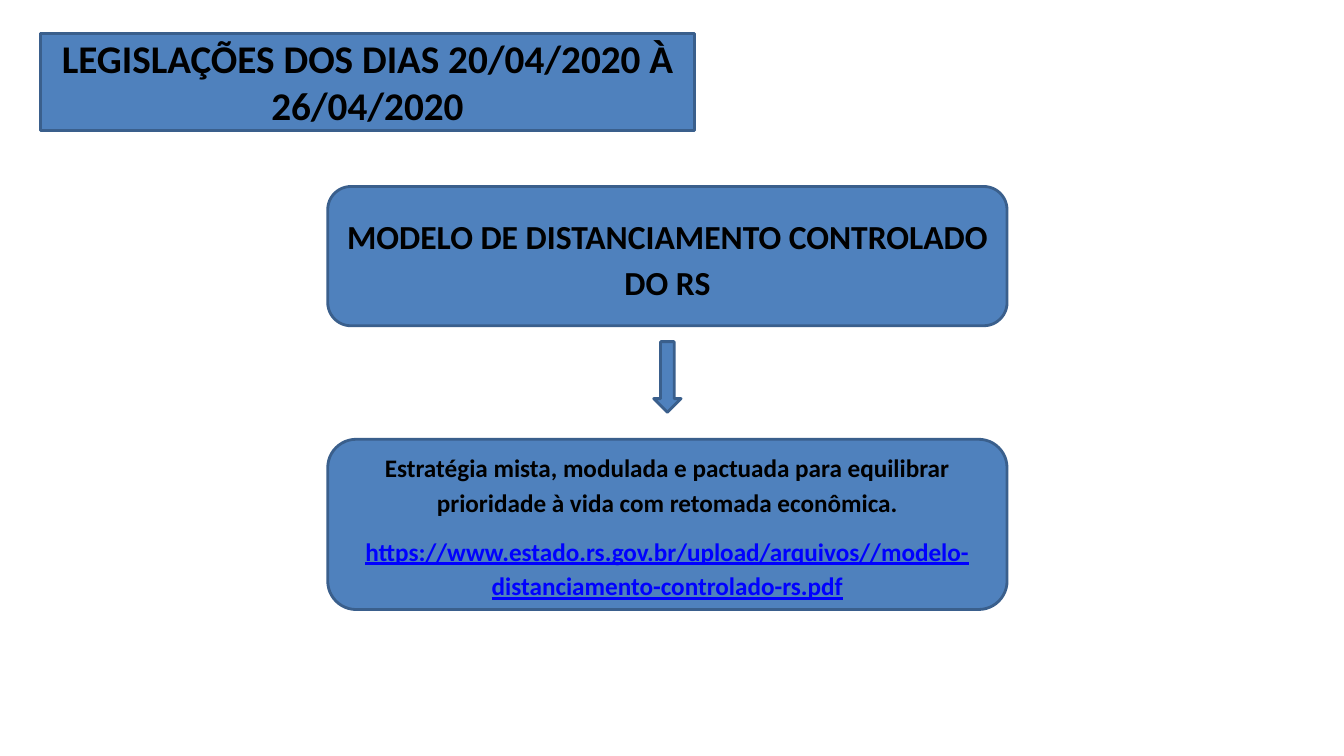
from dataclasses import dataclass

from lxml import etree
from pptx import Presentation
from pptx.dml.color import RGBColor
from pptx.enum.shapes import MSO_SHAPE
from pptx.enum.text import MSO_ANCHOR, MSO_AUTO_SIZE, PP_ALIGN
from pptx.oxml.ns import qn
from pptx.util import Cm, Pt

COLORS = {"fill": "4F81BD", "outline": "3A5F8C", "text": "000000", "link": "0000FF"}
FONT = "Calibri"

# Shared column of the flow, in centimetres
FLOW_LEFT, FLOW_WIDTH = 8.26, 17.12
ARROW_WIDTH = 0.69


@dataclass(frozen=True)
class Line:
    text: str
    size: int
    color: str = "text"
    underline: bool = False
    spacing: float = 1.15
    after: int = 0


@dataclass(frozen=True)
class Step:
    top: float
    height: float
    lines: tuple[Line, ...] = ()
    left: float = FLOW_LEFT
    width: float = FLOW_WIDTH
    kind: MSO_SHAPE = MSO_SHAPE.ROUNDED_RECTANGLE


HEADING = Step(0.84, 2.44, (Line("LEGISLAÇÕES DOS DIAS 20/04/2020 À 26/04/2020", 28, spacing=1.0),),
               left=1.02, width=16.48)

FLOW = (
    Step(4.7, 3.51, (Line("MODELO DE DISTANCIAMENTO CONTROLADO DO RS", 24),)),
    Step(11.07, 4.29, (
        Line("Estratégia mista, modulada e pactuada para equilibrar prioridade à vida "
             "com retomada econômica.", 18, after=10),
        Line("https://www.estado.rs.gov.br/upload/arquivos//modelo-distanciamento-controlado-rs.pdf",
             18, color="link", underline=True, after=10),
    )),
    Step(8.61, 1.78, left=FLOW_LEFT + (FLOW_WIDTH - ARROW_WIDTH) / 2, width=ARROW_WIDTH,
         kind=MSO_SHAPE.DOWN_ARROW),
)


def write(paragraph, text: str, *, size: int, color: str, underline: bool,
          spacing: float, after: int) -> None:
    paragraph.alignment = PP_ALIGN.CENTER
    paragraph.line_spacing = spacing
    paragraph.space_after = Pt(after)
    run = paragraph.add_run()
    run.text = text
    run.font.name = FONT
    run.font.size = Pt(size)
    run.font.bold = True
    run.font.underline = underline
    run.font.color.rgb = RGBColor.from_string(COLORS[color])


def style(shape, step: Step) -> None:
    shape.fill.solid()
    shape.fill.fore_color.rgb = RGBColor.from_string(COLORS["fill"])
    shape.line.color.rgb = RGBColor.from_string(COLORS["outline"])
    shape.line.width = Pt(2)
    shape.shadow.inherit = False
    frame = shape.text_frame
    frame.word_wrap = True
    frame.auto_size = MSO_AUTO_SIZE.NONE
    frame.vertical_anchor = MSO_ANCHOR.MIDDLE
    for index, line in enumerate(step.lines):
        paragraph = frame.add_paragraph() if index else frame.paragraphs[0]
        write(paragraph, line.text, size=line.size, color=line.color,
              underline=line.underline, spacing=line.spacing, after=line.after)


def place_heading(title, step: Step) -> None:
    title.left, title.top = Cm(step.left), Cm(step.top)
    title.width, title.height = Cm(step.width), Cm(step.height)
    # Rounded outline for the title placeholder
    outline = etree.SubElement(title.element.spPr, qn("a:prstGeom"), prst="roundRect")
    etree.SubElement(outline, qn("a:avLst"))
    style(title, step)


def add_step(slide, step: Step) -> None:
    shape = slide.shapes.add_shape(step.kind, Cm(step.left), Cm(step.top),
                                   Cm(step.width), Cm(step.height))
    style(shape, step)


def main() -> None:
    deck = Presentation()
    deck.slide_width, deck.slide_height = Cm(33.87), Cm(19.05)
    slide = deck.slides.add_slide(deck.slide_layouts[5])

    # Heading
    place_heading(slide.shapes.title, HEADING)

    # Model, strategy and the arrow between them
    for step in FLOW:
        add_step(slide, step)

    deck.save("out.pptx")


if __name__ == "__main__":
    main()
